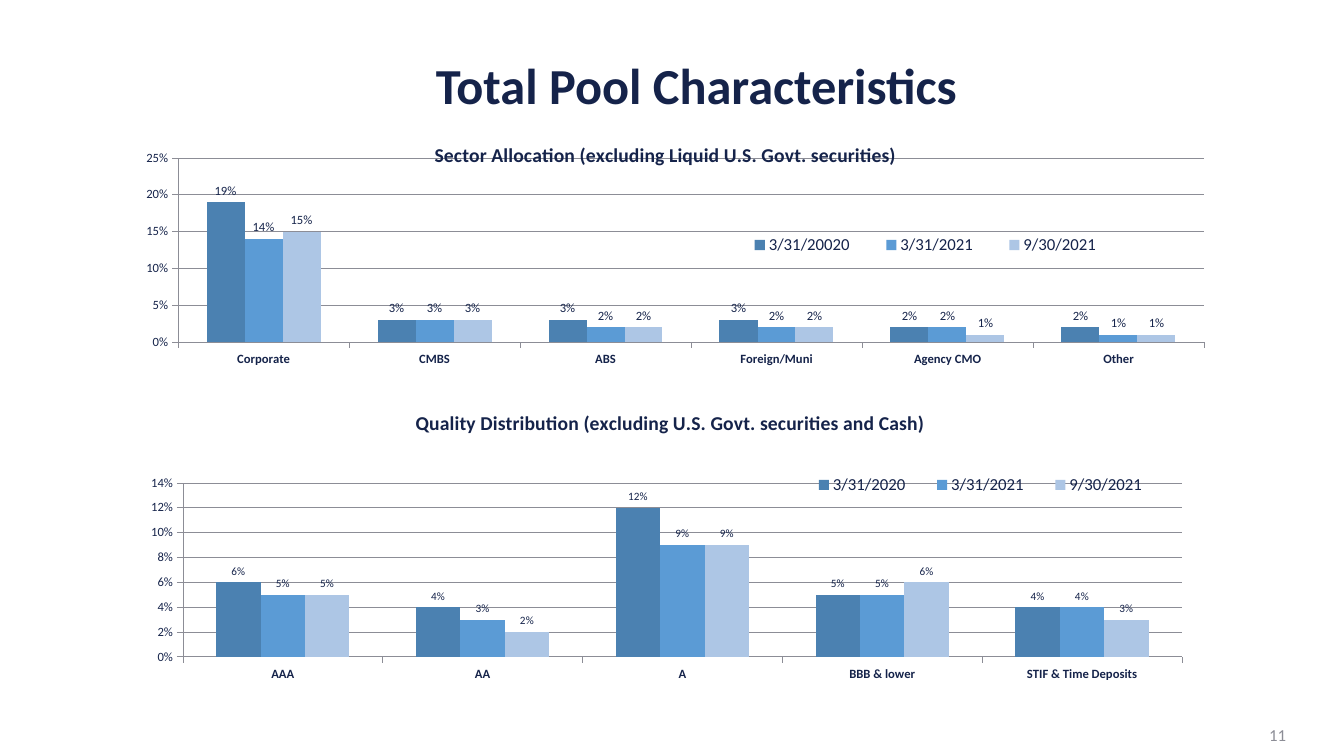
from pptx import Presentation
from pptx.chart.data import CategoryChartData
from pptx.dml.color import RGBColor
from pptx.enum.chart import XL_CHART_TYPE as ChartType
from pptx.enum.chart import XL_LABEL_POSITION as LabelPosition
from pptx.enum.chart import XL_LEGEND_POSITION as LegendPosition
from pptx.enum.chart import XL_TICK_MARK as TickMark
from pptx.enum.text import MSO_ANCHOR as Anchor
from pptx.enum.text import PP_ALIGN as Align
from pptx.oxml import parse_xml
from pptx.oxml.ns import nsdecls
from pptx.util import Pt

PX = 12192000 / 1344  # EMU in one px

THEME = {
    "font": "Calibri",
    "ink": RGBColor.from_string("15234A"),
    "grey": RGBColor.from_string("8C8D96"),
    "bars": [RGBColor.from_string(c) for c in ("4B81B1", "5B9BD5", "ADC6E5")],
    "title": 36,
    "heading": 14,
    "legend": 12,
    "axis": 9,
    "page": 12,
}


def write(frame, text, size, color=THEME["ink"], bold=False, align=Align.CENTER, spacing=None):
    paragraph = frame.paragraphs[0]
    paragraph.alignment = align
    if spacing:
        paragraph.line_spacing = spacing
    run = paragraph.add_run()
    run.text = text
    run.font.name, run.font.size, run.font.bold = THEME["font"], Pt(size), bold
    run.font.color.rgb = color


def place(part, index, box, area, inner=False):
    """Set a manual layout from slide px: left, top and optional width, height."""
    for old in part.xpath("c:layout"):
        part.remove(old)
    left, top, width, height = area
    shares = [(box[0] - left) / width, (box[1] - top) / height]
    if len(box) == 4:
        shares += [box[2] / width, box[3] / height]
    target = '<c:layoutTarget val="inner"/>' if inner else ""
    modes = '<c:xMode val="edge"/><c:yMode val="edge"/>'
    sizes = "".join(f'<c:{tag} val="{share:.4f}"/>' for tag, share in zip("xywh", shares))
    part.insert(index, parse_xml(
        f'<c:layout {nsdecls("c")}><c:manualLayout>{target}{modes}{sizes}'
        "</c:manualLayout></c:layout>"))


charts = [
    {
        "heading": "Sector Allocation (excluding Liquid U.S. Govt. securities)",
        "area": (90, 120, 1145, 299),
        "plot": (178, 158, 1026, 184),
        "heading_at": (431, 138),
        "legend_at": (724, 233, 403, 24),
        "legend_side": LegendPosition.BOTTOM,
        "overlay": False,
        "top": 0.25, "step": 0.05, "label_size": 9,
        "categories": ["Corporate", "CMBS", "ABS", "Foreign/Muni", "Agency CMO", "Other"],
        "series": {
            "3/31/20020": [0.19, 0.03, 0.03, 0.03, 0.02, 0.02],
            "3/31/2021": [0.14, 0.03, 0.02, 0.02, 0.02, 0.01],
            "9/30/2021": [0.15, 0.03, 0.02, 0.02, 0.01, 0.01],
        },
    },
    {
        "heading": "Quality Distribution (excluding U.S. Govt. securities and Cash)",
        "area": (130, 388, 1074, 299),
        "plot": (183, 483, 999, 174),
        "heading_at": (412, 406),
        "legend_at": (793, 473, 375, 24),
        "legend_side": LegendPosition.TOP,
        "overlay": True,
        "top": 0.14, "step": 0.02, "label_size": 8,
        "categories": ["AAA", "AA", "A", "BBB & lower", "STIF & Time Deposits"],
        "series": {
            "3/31/2020": [0.06, 0.04, 0.12, 0.05, 0.04],
            "3/31/2021": [0.05, 0.03, 0.09, 0.05, 0.04],
            "9/30/2021": [0.05, 0.02, 0.09, 0.06, 0.03],
        },
    },
]

deck = Presentation()
deck.slide_width, deck.slide_height = round(1344 * PX), round(756 * PX)
slide = deck.slides.add_slide(deck.slide_layouts[5])

# Slide title
title = slide.shapes.title
title.left, title.top, title.width, title.height = (round(n * PX) for n in (210, 74, 973, 29))
title.text_frame.vertical_anchor = Anchor.MIDDLE
write(title.text_frame, "Total Pool Characteristics", THEME["title"], bold=True, spacing=0.9)

# Column charts
for info in charts:
    data = CategoryChartData(number_format="0%")
    data.categories = info["categories"]
    for name, values in info["series"].items():
        data.add_series(name, values)
    area = info["area"]
    chart = slide.shapes.add_chart(
        ChartType.COLUMN_CLUSTERED, *(round(n * PX) for n in area), data).chart
    chart.font.name, chart.font.size = THEME["font"], Pt(THEME["axis"])
    chart.font.color.rgb = THEME["ink"]

    # Heading and legend
    write(chart.chart_title.text_frame, info["heading"], THEME["heading"], bold=True)
    chart.chart_title.include_in_layout = info["overlay"]
    chart.has_legend = True
    legend = chart.legend
    legend.position = info["legend_side"]
    legend.include_in_layout = False
    legend.font.name, legend.font.size = THEME["font"], Pt(THEME["legend"])
    legend.font.color.rgb = THEME["ink"]

    # Axes
    percent = chart.value_axis
    percent.minimum_scale, percent.maximum_scale = 0, info["top"]
    percent.major_unit = info["step"]
    percent.tick_labels.number_format = "0%"
    percent.tick_labels.number_format_is_linked = False
    percent.has_major_gridlines = True
    for axis in (percent, chart.category_axis):
        axis.major_tick_mark = TickMark.OUTSIDE
        axis.tick_labels.font.name = THEME["font"]
        axis.tick_labels.font.size = Pt(THEME["axis"])
        axis.tick_labels.font.color.rgb = THEME["ink"]
        axis.tick_labels.font.bold = axis is not percent
    for line in (percent.format.line, chart.category_axis.format.line,
                 percent.major_gridlines.format.line):
        line.color.rgb, line.width = THEME["grey"], Pt(0.5)

    # Bars and their labels
    bars = chart.plots[0]
    bars.gap_width, bars.overlap, bars.vary_by_categories = 150, 0, False
    for period, color in zip(bars.series, THEME["bars"]):
        period.format.fill.solid()
        period.format.fill.fore_color.rgb = color
        labels = period.data_labels
        labels.show_value = True
        labels.position = LabelPosition.OUTSIDE_END
        labels.number_format, labels.number_format_is_linked = "0%", False
        labels.font.name, labels.font.size = THEME["font"], Pt(info["label_size"])
        labels.font.color.rgb = THEME["ink"]

    # Positions inside the chart
    root = chart.element
    place(root.xpath("c:chart/c:plotArea")[0], 0, info["plot"], area, inner=True)
    place(root.xpath("c:chart/c:title")[0], 1, info["heading_at"], area)
    place(root.xpath("c:chart/c:legend")[0], 1, info["legend_at"], area)

# Page number
page = slide.shapes.add_textbox(*(round(n * PX) for n in (994, 715, 302, 40))).text_frame
page.word_wrap = True
page.vertical_anchor = Anchor.MIDDLE
write(page, "11", THEME["page"], color=THEME["grey"], align=Align.RIGHT)

deck.save("out.pptx")
